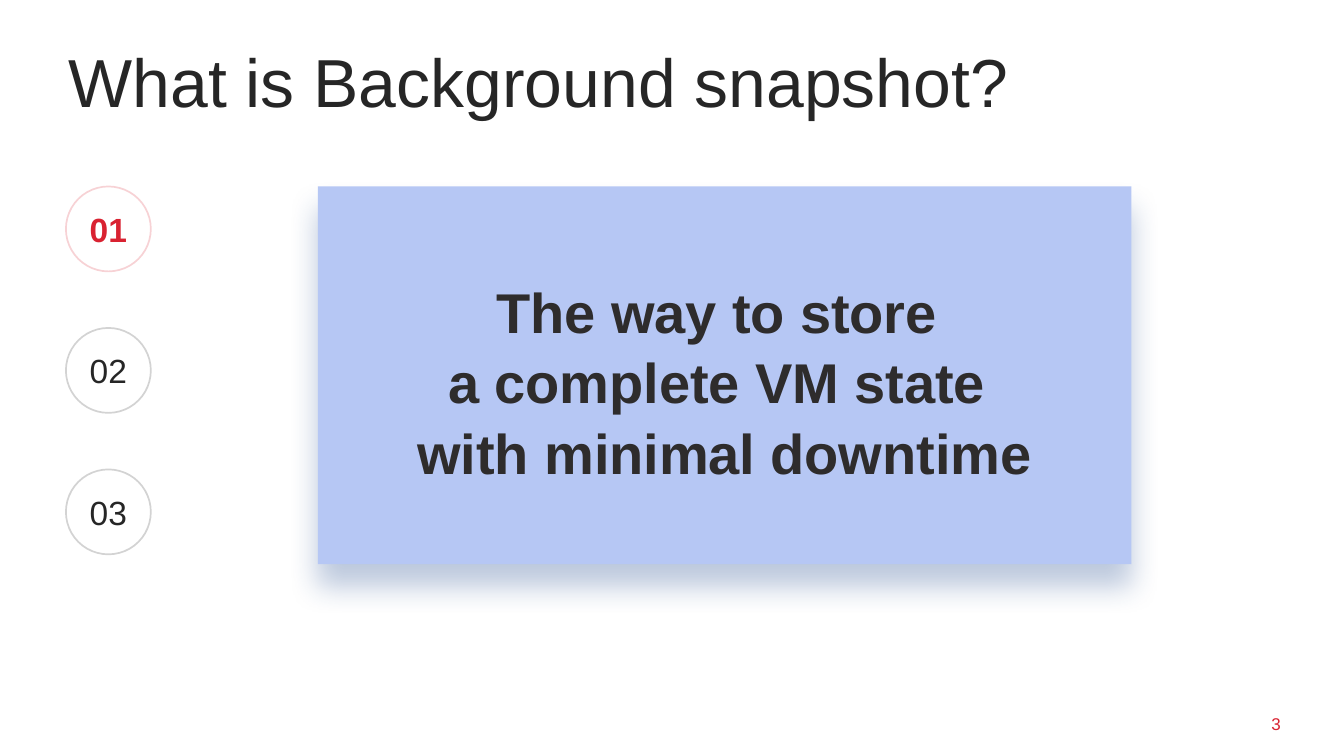
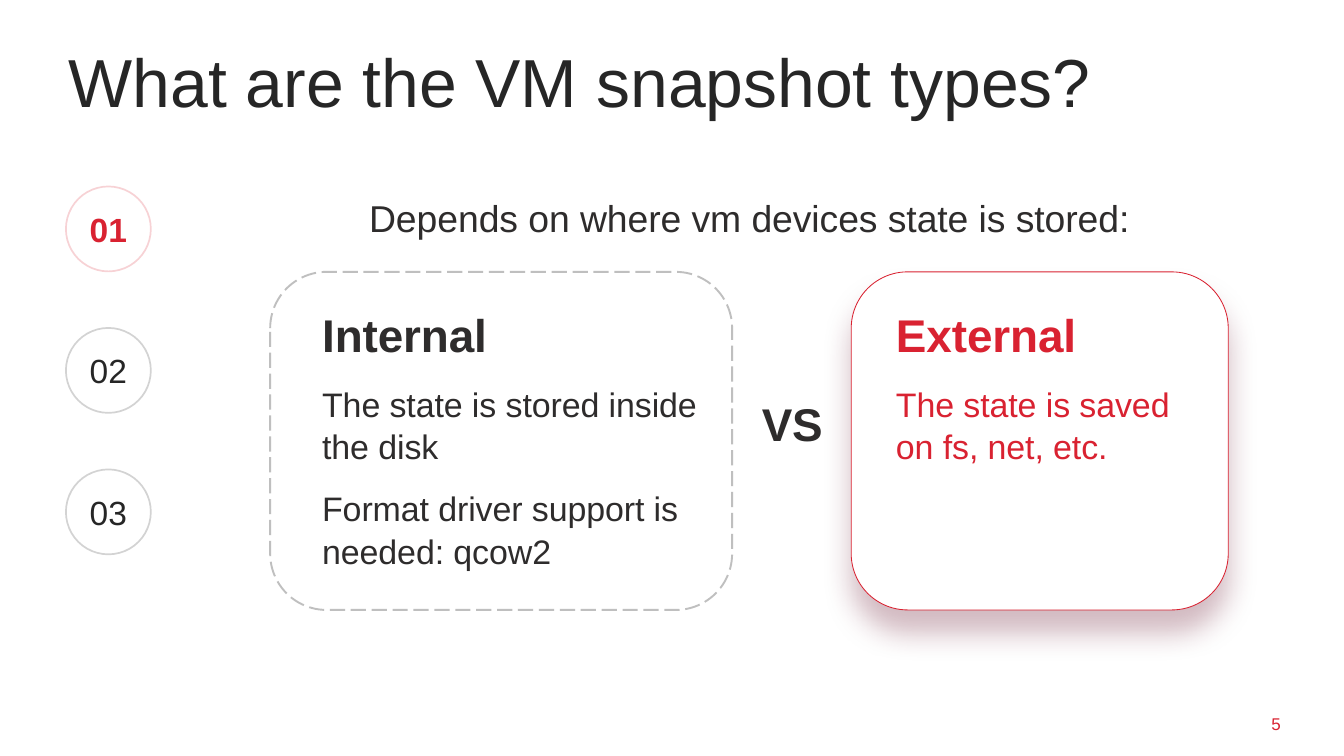
from dataclasses import dataclass

from lxml.etree import SubElement
from pptx import Presentation
from pptx.dml.color import RGBColor
from pptx.enum.dml import MSO_LINE
from pptx.enum.shapes import MSO_SHAPE as Shape
from pptx.enum.text import MSO_ANCHOR as Anchor, MSO_AUTO_SIZE as AutoSize, PP_ALIGN as Align
from pptx.oxml.ns import qn
from pptx.util import Cm, Pt

FONT = "Arial"
RED, DARK, TEXT, GREY = "D92231", "262626", "2E2C2C", "BFBFBF"
WHITE, BLUE = "FFFFFF", "B6C7F4"
BLUE_SHADOW, RED_SHADOW = "254D90", "6C1C34"
STEPS = ("01", "02", "03")
STEP_LEFT, STEP_TOP, STEP_SIZE, STEP_PITCH = 2.74, 7.75, 3.53, 5.88


@dataclass(frozen=True)
class Box:
    left: float
    top: float
    width: float
    height: float

    def lengths(self) -> tuple:
        return Cm(self.left), Cm(self.top), Cm(self.width), Cm(self.height)


@dataclass(frozen=True)
class Para:
    text: str
    size: float
    bold: bool = False


@dataclass(frozen=True)
class Block:
    box: Box
    paras: tuple[Para, ...]
    color: str = TEXT
    align: Align = Align.CENTER
    indent: float = 0


@dataclass(frozen=True)
class Card:
    box: Box
    kind: Shape
    fill: str = ""
    line: str = ""
    line_width: float = 1
    dash: MSO_LINE = MSO_LINE.SOLID
    shadow: str = ""
    line_alpha: int = 100


@dataclass(frozen=True)
class Page:
    number: str
    title: str
    cards: tuple[Card, ...]
    blocks: tuple[Block, ...]


TITLE = Box(2.34, 1.4, 51.16, 3.89)
NUMBER = Box(47.14, 29.64, 6.35, 0.89)

PAGES = (
    Page(
        "3",
        "What is Background snapshot?",
        (Card(Box(13.21, 7.75, 33.81, 15.7), Shape.RECTANGLE, BLUE, shadow=BLUE_SHADOW),),
        (
            Block(
                Box(15.67, 11.13, 28.88, 8.97),
                (Para("The way to store \na complete VM state \nwith minimal downtime", 66, True),),
            ),
        ),
    ),
    Page(
        "5",
        "What are the VM snapshot types?",
        (
            Card(Box(35.38, 11.3, 15.67, 14.05), Shape.ROUNDED_RECTANGLE, WHITE, RED,
                 shadow=RED_SHADOW),
            Card(Box(11.23, 11.3, 19.2, 14.05), Shape.ROUNDED_RECTANGLE, line=GREY,
                 line_width=2.25, dash=MSO_LINE.LONG_DASH),
        ),
        (
            Block(Box(11.23, 7.75, 39.83, 8.33),
                  (Para("Depends on where vm devices state is stored:", 44),)),
            Block(
                Box(12.24, 12.4, 17.27, 14.63),
                (
                    Para("Internal", 54, True),
                    Para("The state is stored inside the disk", 40),
                    Para("Format driver support is needed: qcow2", 40),
                ),
                align=Align.LEFT,
                indent=0.64,
            ),
            Block(
                Box(36.09, 12.4, 13.64, 14.63),
                (Para("External", 54, True), Para("The state is saved on fs, net, etc.", 40)),
                RED,
                Align.LEFT,
                0.64,
            ),
            Block(Box(30.76, 16.08, 4.34, 6.17), (Para("VS", 54, True),)),
        ),
    ),
)


def rgb(value: str) -> RGBColor:
    return RGBColor.from_string(value)


def set_frame(tf, anchor: Anchor, side: float, vertical: float) -> None:
    tf.word_wrap = True
    tf.auto_size = AutoSize.NONE
    tf.vertical_anchor = anchor
    tf.margin_left = tf.margin_right = Cm(side)
    tf.margin_top = tf.margin_bottom = Cm(vertical)


def write(p, para: Para, color: str, align: Align, spacing: int = 0) -> None:
    p.text = para.text
    p.alignment = align
    for r in p.runs:
        r.font.name = FONT
        r.font.size = Pt(para.size)
        r.font.bold = para.bold
        r.font.color.rgb = rgb(color)
        if spacing:
            r._r.get_or_add_rPr().set("spc", str(spacing))


def add_shadow(s, color: str) -> None:
    effects = s._element.spPr.find(qn("a:effectLst"))
    outer = SubElement(effects, qn("a:outerShdw"), blurRad=str(Pt(34)), dist=str(Pt(26)),
                       dir="5400000", algn="t", rotWithShape="0")
    clr = SubElement(outer, qn("a:srgbClr"), val=color)
    SubElement(clr, qn("a:alpha"), val="30000")


def add_card(slide, card: Card):
    s = slide.shapes.add_shape(card.kind, *card.box.lengths())
    s.shadow.inherit = False
    if card.fill:
        s.fill.solid()
        s.fill.fore_color.rgb = rgb(card.fill)
    else:
        s.fill.background()
    if card.line:
        s.line.color.rgb = rgb(card.line)
        s.line.width = Pt(card.line_width)
        s.line.dash_style = card.dash
    else:
        s.line.fill.background()
    if card.line_alpha < 100:
        clr = s._element.xpath("./p:spPr/a:ln/a:solidFill/a:srgbClr")[0]
        SubElement(clr, qn("a:alpha"), val=str(card.line_alpha * 1000))
    if card.shadow:
        add_shadow(s, card.shadow)
    return s


def add_block(slide, block: Block) -> None:
    tf = slide.shapes.add_textbox(*block.box.lengths()).text_frame
    set_frame(tf, Anchor.TOP, 0.51, 0.25)
    for i, para in enumerate(block.paras):
        p = tf.add_paragraph() if i else tf.paragraphs[0]
        write(p, para, block.color, block.align, -10)
        p.line_spacing = 1.05
        p.space_before = Pt(16.3 if i else 0)
        p.space_after = Pt(6)
        if block.indent:
            p._p.get_or_add_pPr().set("marL", str(Cm(block.indent)))


def add_title(slide, text: str) -> None:
    s = slide.shapes.title
    s.left, s.top, s.width, s.height = TITLE.lengths()
    set_frame(s.text_frame, Anchor.TOP, 0.51, 0.25)
    write(s.text_frame.paragraphs[0], Para(text, 80), DARK, Align.LEFT)


def add_number(slide, number: str) -> None:
    tf = slide.shapes.add_textbox(*NUMBER.lengths()).text_frame
    set_frame(tf, Anchor.MIDDLE, 0.25, 0)
    write(tf.paragraphs[0], Para(number, 20), RED, Align.RIGHT, 50)


def add_steps(slide, active: str) -> None:
    for i, step in enumerate(STEPS):
        color = RED if step == active else DARK
        box = Box(STEP_LEFT, STEP_TOP + i * STEP_PITCH, STEP_SIZE, STEP_SIZE)
        s = add_card(slide, Card(box, Shape.OVAL, WHITE, color, 2, line_alpha=20))
        set_frame(s.text_frame, Anchor.MIDDLE, 0, 0)
        write(s.text_frame.paragraphs[0], Para(step, 39.5, step == active), color, Align.CENTER)


def add_page(prs, page: Page) -> None:
    slide = prs.slides.add_slide(prs.slide_layouts.get_by_name("Title Only"))
    add_title(slide, page.title)
    add_number(slide, page.number)
    add_steps(slide, "01")
    for card in page.cards:
        add_card(slide, card)
    for block in page.blocks:
        add_block(slide, block)


def main() -> None:
    prs = Presentation()
    prs.slide_width, prs.slide_height = Cm(55.86), Cm(31.42)
    for page in PAGES:
        add_page(prs, page)
    prs.save("out.pptx")


if __name__ == "__main__":
    main()
